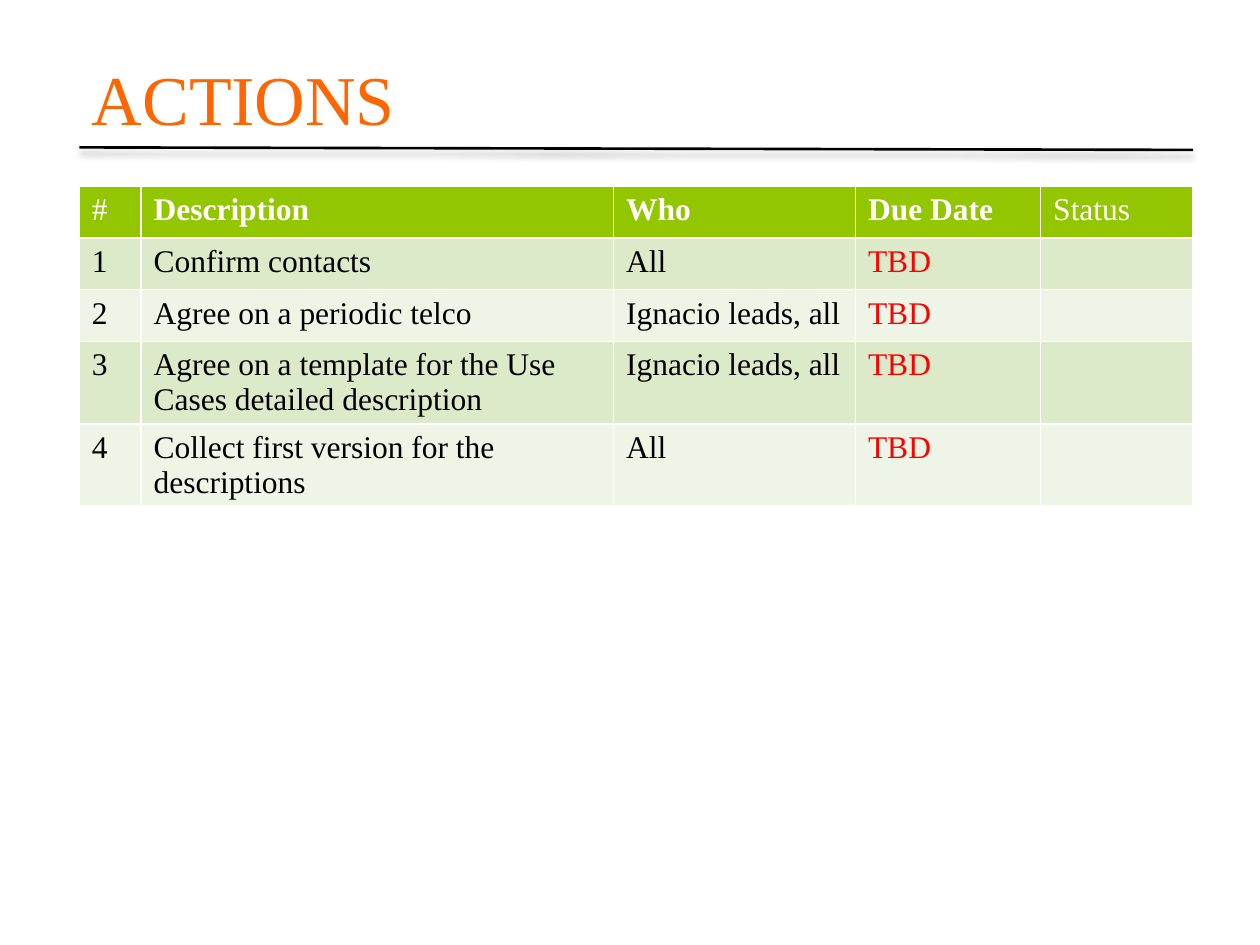
"""Build the slide that lists the open actions in a table."""
from lxml import etree
from pptx import Presentation
from pptx import util as u
from pptx.dml.color import RGBColor
from pptx.enum import shapes, text
from pptx.oxml import ns

HUES = {"title": "FF6600", "rule": "000000", "head": "94C600", "odd": "DCEACA",
        "even": "EEF5E6", "light": "FFFFFF", "dark": "000000", "due": "FF0000"}
FACE = "Times New Roman"
TITLE = "ACTIONS"
HEADS = ["#", "Description", "Who", "Due Date", "Status"]
PLAIN = ("#", "Status")
ROWS = [
    ("1", "Confirm contacts", "All", "TBD", ""),
    ("2", "Agree on a periodic telco", "Ignacio leads, all", "TBD", ""),
    ("3", "Agree on a template for the Use Cases detailed description",
     "Ignacio leads, all", "TBD", ""),
    ("4", "Collect first version for the descriptions", "All", "TBD", ""),
]
WIDTHS = [0.49, 3.75, 1.92, 1.47, 1.21]
LEFT, TOP, HIGH = 0.63, 1.48, 0.41


def hue(name):
    return RGBColor.from_string(HUES[name])


def style(font, name, **vals):
    for key, val in {"name": FACE, **vals}.items():
        setattr(font, key, val)
    font.color.rgb = hue(name)


def add_title(slide):
    box = slide.shapes.title
    place = zip(("left", "top", "width", "height"), (LEFT, 0.22, 7.44, 0.94))
    for key, val in place:
        setattr(box, key, u.Inches(val))
    frame = box.text_frame
    frame.text = TITLE
    frame.vertical_anchor = text.MSO_ANCHOR.BOTTOM
    para = frame.paragraphs[0]
    para.alignment = text.PP_ALIGN.LEFT
    style(para.runs[0].font, "title", size=u.Pt(40))


def add_rule(slide):
    ends = (LEFT, 1.17, LEFT + sum(WIDTHS), 1.19)
    rule = slide.shapes.add_connector(
        shapes.MSO_CONNECTOR.STRAIGHT, *map(u.Inches, ends))
    rule.line.color.rgb = hue("rule")
    rule.line.width = u.Pt(1.5)
    props = rule.line._get_or_add_ln().getparent()
    glow = etree.SubElement(props, ns.qn("a:effectLst"))
    shade = etree.SubElement(
        glow, ns.qn("a:outerShdw"), blurRad=str(u.Pt(4)),
        dist=str(u.Pt(3)), dir="5400000", rotWithShape="0")
    tint = etree.SubElement(shade, ns.qn("a:srgbClr"), val=HUES["rule"])
    etree.SubElement(tint, ns.qn("a:alpha"), val="27000")


def add_grid(slide):
    lines = [HEADS, *ROWS]
    size = (LEFT, TOP, sum(WIDTHS), HIGH * len(lines))
    grid = slide.shapes.add_table(
        len(lines), len(HEADS), *map(u.Inches, size)).table
    for col, wide in zip(grid.columns, WIDTHS):
        col.width = u.Inches(wide)
    for i, line in enumerate(lines):
        grid.rows[i].height = u.Inches(HIGH)
        fill = "head" if i == 0 else "odd" if i % 2 else "even"
        for j, words in enumerate(line):
            cell = grid.cell(i, j)
            cell.fill.solid()
            cell.fill.fore_color.rgb = hue(fill)
            cell.text = words
            ink = "light" if i == 0 else "due" if HEADS[j] == "Due Date" else "dark"
            para = cell.text_frame.paragraphs[0]
            for font in [run.font for run in para.runs] or [para.font]:
                style(font, ink, size=u.Pt(18),
                      bold=i == 0 and words not in PLAIN)


def main():
    deck = Presentation()
    deck.slide_width, deck.slide_height = u.Inches(10), u.Inches(7.5)
    slide = deck.slides.add_slide(deck.slide_layouts.get_by_name("Title Only"))
    add_rule(slide)
    add_title(slide)
    add_grid(slide)
    deck.save("out.pptx")


if __name__ == "__main__":
    main()
